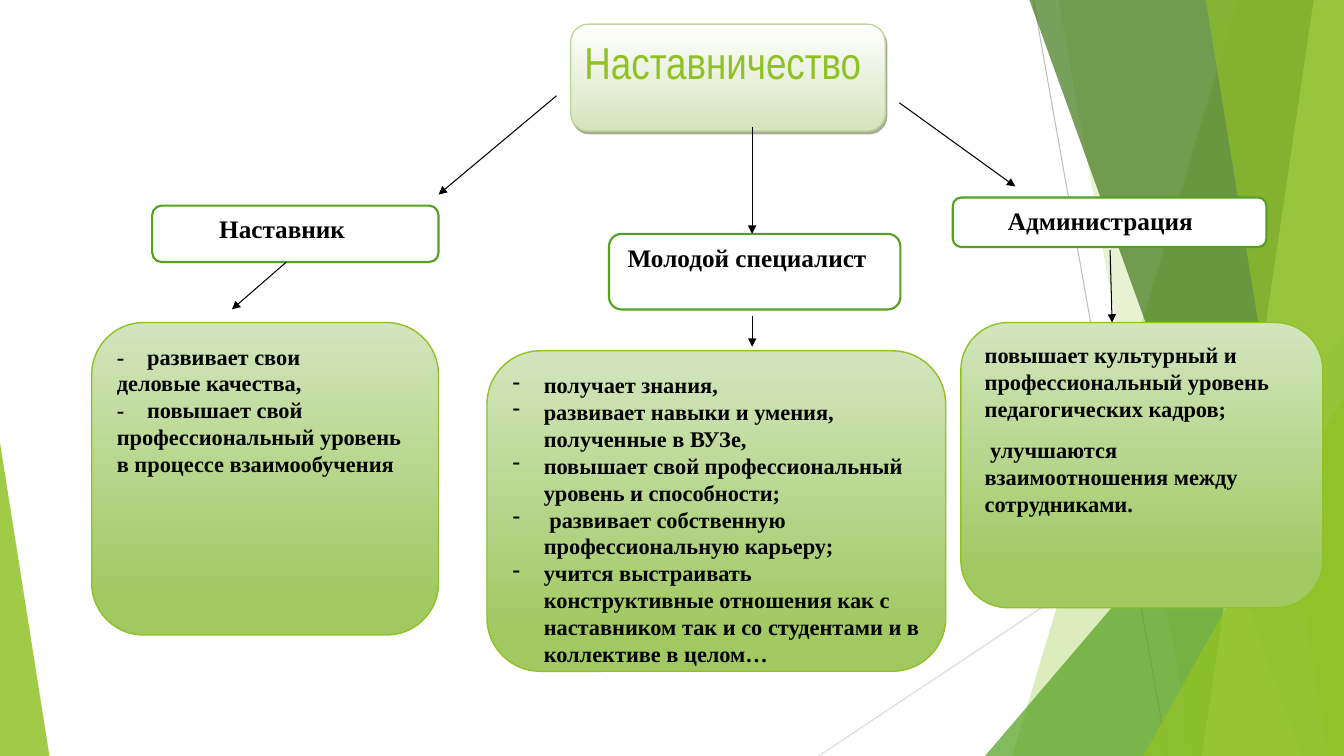
from lxml import etree
from pptx import Presentation
from pptx.dml.color import RGBColor
from pptx.enum import shapes, text
from pptx.oxml import ns
from pptx.util import Inches, Pt

W, H = 13.33, 7.5
BLACK, LIME, GREEN = "000000", "90C226", "54A021"

deck = Presentation()
deck.slide_width, deck.slide_height = Inches(W), Inches(H)
slide = deck.slides.add_slide(deck.slide_layouts[6])


def rgb(value):
    return RGBColor.from_string(value)


def sub(parent, tag, **attributes):
    return etree.SubElement(parent, ns.qn(tag), attributes)


# Background rays, then slanted facets and corner triangles from back to front
lines = [
    (10.25, 0, 11.58, H, "BFBFBF", False),
    (W, 4.03, 8.12, H, "D9D9D9", False),
]
# Facet: x at the top, x at the bottom; triangle: left, top, width, apex
facets = [
    ((12.28, 10.04), LIME, 30),
    ((10.5, 11.83), LIME, 20),
    ((9.77, 3.33, 3.56, 1), GREEN, 72),
    ((10.21, 12.91), "3F7819", 70),
    ((13.03, 11.92), "C0E474", 70),
    ((11.96, 13.18), LIME, 65),
    ((11.34, 3.93, 1.99, 1), LIME, 80),
    ((0, 4.39, 0.49, 0), LIME, 85),
]
# Arrows that join the blocks
arrows = [
    (7.46, 3.14, 7.46, 3.44),
    (7.46, 1.26, 7.46, 2.32),
    (5.52, 0.95, 4.35, 1.93),
    (8.92, 1.02, 10.07, 1.85),
    (2.84, 2.6, 2.3, 3.07),
    (11.01, 2.48, 11.03, 3.2),
]


def draw_line(x1, y1, x2, y2, color, arrow):
    line = slide.shapes.add_connector(
        shapes.MSO_CONNECTOR.STRAIGHT, Inches(x1), Inches(y1), Inches(x2), Inches(y2))
    line.line.color.rgb = rgb(color)
    line.line.width = Pt(0.75)
    if arrow:
        sub(line.line._get_or_add_ln(), "a:tailEnd", type="triangle")
    sub(line._element.spPr, "a:effectLst")


for ray in lines:
    draw_line(*ray)

for place, color, opacity in facets:
    if len(place) == 2:
        top_x, bottom_x = place
        outline = slide.shapes.build_freeform(Inches(top_x), Inches(0))
        outline.add_line_segments(
            [(Inches(x), Inches(y)) for x, y in ((W, 0), (W, H), (bottom_x, H))])
        facet = outline.convert_to_shape()
    else:
        left, top, width, apex = place
        facet = slide.shapes.add_shape(
            shapes.MSO_SHAPE.ISOSCELES_TRIANGLE,
            Inches(left), Inches(top), Inches(width), Inches(H - top))
        facet.adjustments[0] = apex
    facet.shadow.inherit = False
    facet.fill.solid()
    facet.fill.fore_color.rgb = rgb(color)
    facet.line.fill.background()
    tint = facet._element.spPr.find(ns.qn("a:solidFill"))[0]
    sub(tint, "a:alpha", val=str(opacity * 1000))

# Block styles: gradient or plain fill, outline, text
duty = dict(fill=[("D3E5BE", 0), ("A0C962", 0.88)], line=LIME, weight=1,
            size=16, font="Times New Roman", color=BLACK, bold=True, center=False)
role = dict(duty, fill="FFFFFF", line=GREEN, weight=1.5, size=18, center=True)
heading = dict(role, fill=[("FFFFFF", 0), ("D6E3BC", 1)], line="C2D69B", weight=1,
               size=32, font="Arial Narrow", color=LIME, bold=False)

# Block: box, style, left and right inset, paragraph layout, paragraphs
blocks = [
    ((0.91, 3.2, 3.44, 3.1), duty, (0.1, 0.1), "tab", [
        "-\tразвивает свои\vделовые качества,",
        "-\tповышает свой профессиональный уровень в процессе взаимообучения"]),
    ((4.83, 3.48, 4.55, 3.18), duty, (0.1, 0.1), "bullet", [
        "получает знания,",
        "развивает навыки и умения, полученные в ВУЗе,",
        "повышает свой профессиональный уровень и способности;",
        " развивает собственную профессиональную карьеру;",
        "учится выстраивать конструктивные отношения как с наставником "
        "так и со студентами и в коллективе в целом…"]),
    ((9.53, 3.2, 3.59, 2.83), duty, (0.1, 0.1), "spaced", [
        "повышает культурный и профессиональный уровень педагогических кадров;",
        " улучшаются взаимоотношения между сотрудниками."]),
    ((1.51, 2.04, 2.84, 0.56), role, (0.1, 0.36), "", ["Наставник"]),
    ((6.04, 2.32, 2.89, 0.75), role, (0.1, 0.25), "", ["Молодой специалист"]),
    ((9.45, 1.96, 3.11, 0.49), role, (0.1, 0.28), "", ["Администрация"]),
    ((5.66, 0.24, 3.12, 1.06), heading, (0, 0.1), "", ["Наставничество"]),
]

for box, style, insets, layout, paragraphs in blocks:
    block = slide.shapes.add_shape(
        shapes.MSO_SHAPE.ROUNDED_RECTANGLE, *[Inches(v) for v in box])
    block.shadow.inherit = False
    if isinstance(style["fill"], str):
        block.fill.solid()
        block.fill.fore_color.rgb = rgb(style["fill"])
    else:
        block.fill.gradient()
        block.fill.gradient_angle = 270
        for stop, (color, position) in zip(block.fill.gradient_stops, style["fill"]):
            stop.color.rgb = rgb(color)
            stop.position = position
    block.line.color.rgb = rgb(style["line"])
    block.line.width = Pt(style["weight"])
    if style is heading:
        effects = block._element.spPr.find(ns.qn("a:effectLst"))
        shadow = sub(effects, "a:outerShdw", dist=str(Pt(2.2)), dir=str(63 * 60000),
                     algn="ctr", rotWithShape="0")
        sub(sub(shadow, "a:srgbClr", val="4E6128"), "a:alpha", val="50000")

    frame = block.text_frame
    frame.word_wrap = True
    frame.vertical_anchor = text.MSO_ANCHOR.TOP
    frame.margin_left, frame.margin_right = [Inches(v) for v in insets]
    for number, wording in enumerate(paragraphs):
        paragraph = frame.paragraphs[0] if number == 0 else frame.add_paragraph()
        paragraph.alignment = (
            text.PP_ALIGN.CENTER if style["center"] else text.PP_ALIGN.LEFT)
        if layout == "spaced":
            paragraph.space_before = paragraph.space_after = Pt(5)
        properties = paragraph._p.get_or_add_pPr()
        if layout == "bullet":
            properties.set("marL", str(Inches(0.31)))
            properties.set("indent", str(Inches(-0.31)))
            sub(properties, "a:buChar", char="-")
        elif layout == "tab":
            sub(sub(properties, "a:tabLst"), "a:tab", pos=str(Inches(0.3)), algn="l")
        for part, piece in enumerate(wording.split("\v")):
            if part:
                paragraph.add_line_break()
            run = paragraph.add_run()
            run.text = piece
            run.font.size = Pt(style["size"])
            run.font.name = style["font"]
            run.font.bold = style["bold"]
            run.font.color.rgb = rgb(style["color"])

for arrow in arrows:
    draw_line(*arrow, BLACK, True)

deck.save("out.pptx")
